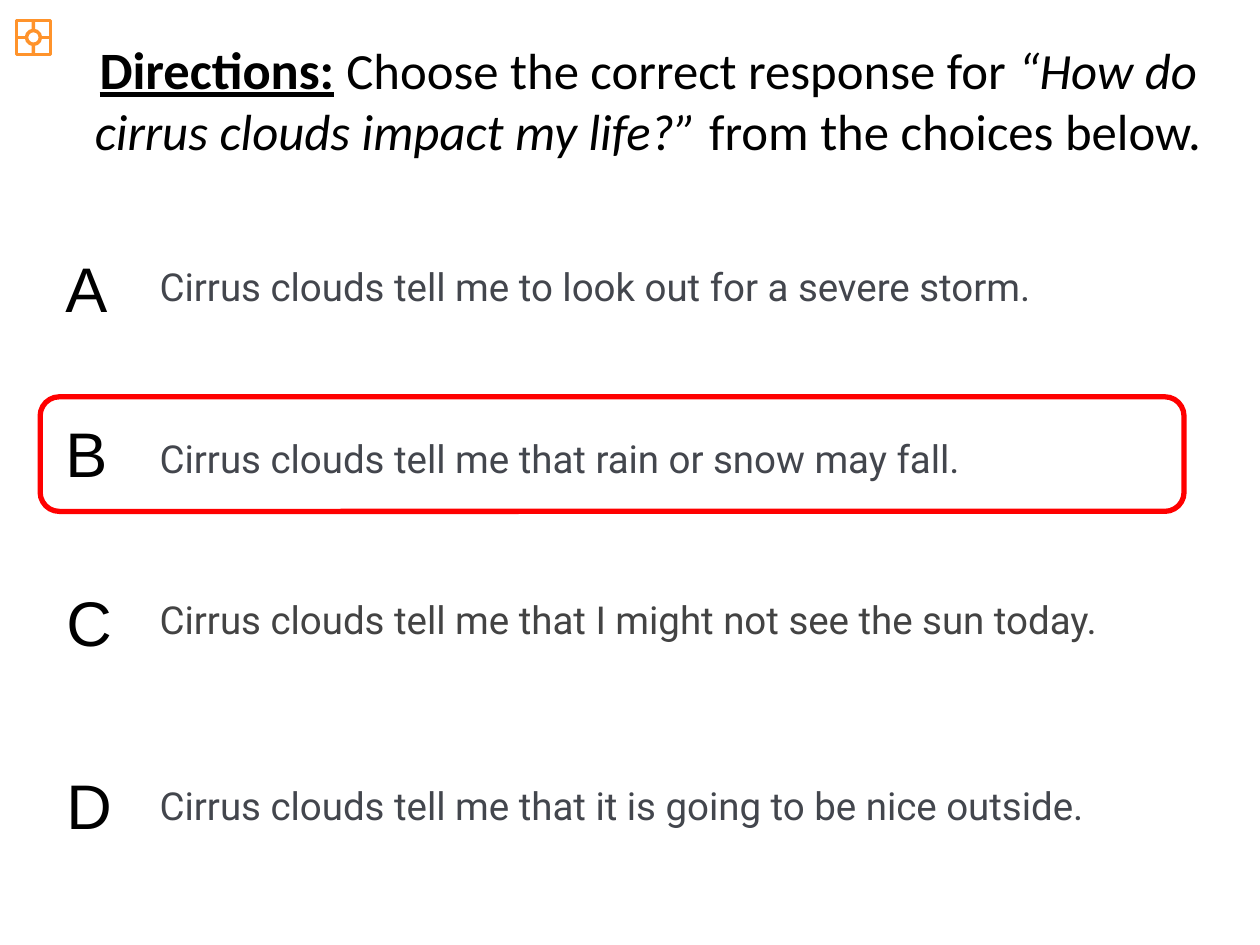
from lxml.etree import SubElement
from pptx import Presentation
from pptx.dml.color import RGBColor
from pptx.enum.shapes import MSO_CONNECTOR, MSO_SHAPE
from pptx.enum.text import MSO_ANCHOR, MSO_AUTO_SIZE, PP_ALIGN
from pptx.oxml.ns import qn
from pptx.util import Cm, Pt

BLACK = RGBColor(0x00, 0x00, 0x00)
WHITE = RGBColor(0xFF, 0xFF, 0xFF)
SLATE = RGBColor(0x43, 0x46, 0x4D)
GREY = RGBColor(0x43, 0x43, 0x43)
RED = RGBColor(0xFF, 0x00, 0x00)
ORANGE = RGBColor(0xFF, 0x93, 0x2B)

# Content: title runs as text, size, bold, underline, italic
TITLE = [
    ("Directions:", 30, True, True, False),
    (" ", 30, True, False, False),
    ("Choose the correct response for ", 29, False, False, False),
    ("“How do cirrus clouds impact my life?” ", 29, False, False, True),
    ("from the choices below.", 29, False, False, False),
]
# Letter, its left and top, answer, its top and colour (cm)
CHOICES = [
    ("A", 1.07, 4.9, "Cirrus clouds tell me to look out for a severe storm.",
     5.18, SLATE),
    ("B", 1.07, 8.23, "Cirrus clouds tell me that rain or snow may fall.",
     8.64, SLATE),
    ("C", 1.09, 11.63,
     "Cirrus clouds tell me that I might not see the sun today.",
     11.89, GREY),
    ("D", 1.09, 15.32,
     "Cirrus clouds tell me that it is going to be nice outside.",
     15.65, SLATE),
]

deck = Presentation()
deck.slide_width, deck.slide_height = Cm(25.4), Cm(19.05)
slide = deck.slides.add_slide(deck.slide_layouts[5])
shapes = slide.shapes


def style(font, name, size, color):
    font.name, font.size = name, Pt(size)
    font.color.rgb = color


def label(text, x, y, w, h, name, size, color):
    frame = shapes.add_textbox(Cm(x), Cm(y), Cm(w), Cm(h)).text_frame
    frame.word_wrap = True
    frame.text = text
    style(frame.paragraphs[0].runs[0].font, name, size, color)


def outline(kind, x, y, w, h, color, width):
    shape = shapes.add_shape(kind, Cm(x), Cm(y), Cm(w), Cm(h))
    shape.shadow.inherit = False
    shape.fill.background()
    shape.line.color.rgb, shape.line.width = color, Pt(width)
    return shape


# Target icon: a square, four spokes and a ring
left, top, side, ring = 0.33, 0.41, 0.69, 0.28
midx, midy = left + side / 2, top + side / 2
square = outline(MSO_SHAPE.RECTANGLE, left, top, side, side, ORANGE, 2)
for site, (dx, dy) in enumerate([(0, -1), (-1, 0), (0, 1), (1, 0)]):
    spoke = shapes.add_connector(
        MSO_CONNECTOR.STRAIGHT,
        Cm(midx + dx * side / 2), Cm(midy + dy * side / 2),
        Cm(midx + dx * ring / 2), Cm(midy + dy * ring / 2))
    spoke.begin_connect(square, site)
    spoke.line.color.rgb, spoke.line.width = ORANGE, Pt(2)
    SubElement(spoke._element.spPr, qn("a:effectLst"))
hub = outline(MSO_SHAPE.OVAL, midx - ring / 2, midy - ring / 2,
              ring, ring, ORANGE, 2)
hub.fill.solid()
hub.fill.fore_color.rgb = WHITE

# Title
title = shapes.title
title.left, title.top = Cm(1.27), Cm(0.61)
title.width, title.height = Cm(23.6), Cm(2.77)
frame = title.text_frame
frame.word_wrap, frame.auto_size = True, MSO_AUTO_SIZE.NONE
frame.vertical_anchor = MSO_ANCHOR.TOP
para = frame.paragraphs[0]
para.alignment = PP_ALIGN.CENTER
for text, size, bold, under, slant in TITLE:
    run = para.add_run()
    run.text = text
    style(run.font, "Calibri", size, BLACK)
    run.font.bold, run.font.underline, run.font.italic = bold, under, slant

# Choices
for letter, x, y, answer, base, color in CHOICES:
    label(letter, x, y, 1.45, 1.8, "Arial", 36, BLACK)
    label(answer, 2.97, base, 21.87, 1.19, "Roboto", 22, color)

# Frame around the right answer
outline(MSO_SHAPE.ROUNDED_RECTANGLE, 0.81, 8, 23.06, 2.31, RED, 3)

deck.save("out.pptx")
